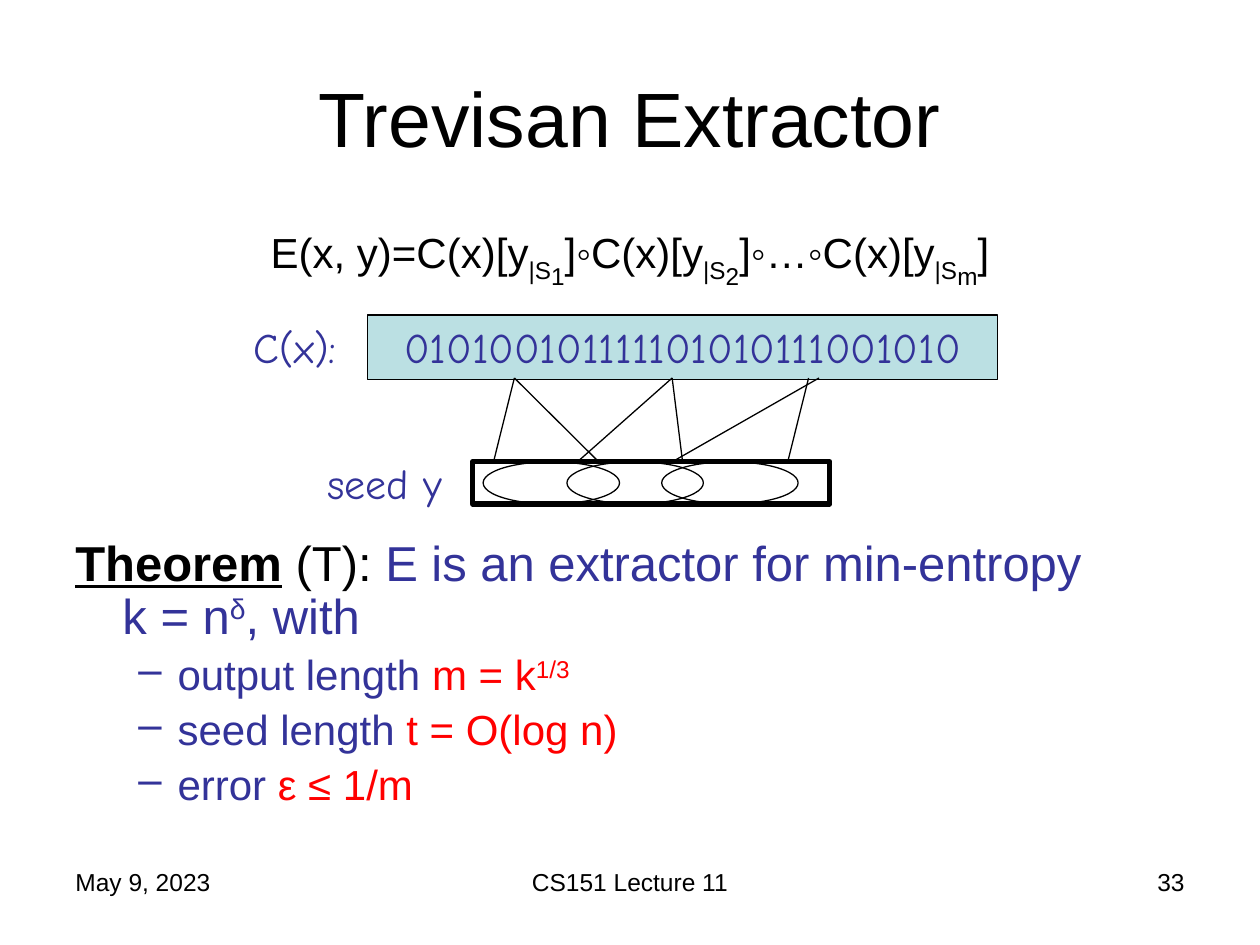
import pptx
import pptx.dml.color
import pptx.enum.shapes
import pptx.enum.text
import pptx.oxml.ns
import pptx.util
from lxml import etree

Cm = pptx.util.Cm
Pt = pptx.util.Pt
qn = pptx.oxml.ns.qn
Shape = pptx.enum.shapes.MSO_SHAPE
Align = pptx.enum.text.PP_ALIGN
Anchor = pptx.enum.text.MSO_ANCHOR

BLACK, INDIGO, RED, AQUA = "000000", "333399", "FF0000", "BBE0E3"
BITS_BOTTOM, SEED_TOP, SEED_HEIGHT = 7.62, 9.31, 0.85


def color(value):
    return pptx.dml.color.RGBColor.from_string(value)


def add_run(paragraph, text, size, ink=BLACK, font="Arial", baseline=0, strong=False):
    run = paragraph.add_run()
    run.text = text
    run.font.size = Pt(size)
    run.font.name = font
    run.font.color.rgb = color(ink)
    if strong:
        run.font.bold = run.font.underline = True
    if baseline:
        run.font._element.set("baseline", str(baseline * 1000))


def add_box(slide, left, top, width, height, align=Align.LEFT):
    frame = slide.shapes.add_textbox(Cm(left), Cm(top), Cm(width), Cm(height)).text_frame
    frame.word_wrap = True
    frame.paragraphs[0].alignment = align
    return frame


def add_label(slide, text, left, top, width, height, size,
              align=Align.LEFT, ink=BLACK, font="Arial"):
    frame = add_box(slide, left, top, width, height, align)
    add_run(frame.paragraphs[0], text, size, ink, font)
    return frame


def add_outline(slide, preset, left, top, width, height, weight=0.75, fill=None):
    outline = slide.shapes.add_shape(preset, Cm(left), Cm(top), Cm(width), Cm(height))
    outline.shadow.inherit = False
    if fill:
        outline.fill.solid()
        outline.fill.fore_color.rgb = color(fill)
    else:
        outline.fill.background()
    outline.line.color.rgb = color(BLACK)
    outline.line.width = Pt(weight)
    return outline


def add_ray(slide, bit_x, seed_x):
    ray = slide.shapes.add_connector(
        pptx.enum.shapes.MSO_CONNECTOR.STRAIGHT,
        Cm(bit_x), Cm(BITS_BOTTOM), Cm(seed_x), Cm(SEED_TOP))
    ray.line.color.rgb = color(BLACK)
    ray.line.width = Pt(0.75)
    etree.SubElement(ray._element.spPr, qn("a:effectLst"))


def set_spacing(paragraph, before):
    paragraph.line_spacing = 0.9
    paragraph.space_before = Pt(before)


def set_indent(paragraph, left, hanging, bullet=None):
    properties = paragraph._p.get_or_add_pPr()
    properties.set("marL", str(Cm(left)))
    properties.set("indent", str(-Cm(hanging)))
    if bullet:
        etree.SubElement(properties, qn("a:buChar")).set("char", bullet)


def add_formula(slide):
    formula = add_box(slide, 1.27, 4.45, 22.86, 1.4, Align.CENTER).paragraphs[0]
    set_spacing(formula, 5.5)
    for lead, index in (("E(x, y)=C(x)[y", "1"), ("]◦C(x)[y", "2"), ("]◦…◦C(x)[y", "m")):
        add_run(formula, lead, 24)
        add_run(formula, "|S", 24, baseline=-25)
        add_run(formula, index, 24, baseline=-40)
    add_run(formula, "]", 24)


def add_theorem(slide):
    frame = add_box(slide, 1.27, 10.74, 22.86, 6.28)
    claim = frame.paragraphs[0]
    set_spacing(claim, 6.4)
    set_indent(claim, 0.95, 0.95)
    add_run(claim, "Theorem", 28, strong=True)
    add_run(claim, " (T): ", 28)
    add_run(claim, "E is an extractor for min-entropy", 28, INDIGO)
    claim.add_line_break()
    add_run(claim, "k = n", 28, INDIGO)
    add_run(claim, "δ", 28, INDIGO, baseline=30)
    add_run(claim, ", with", 28, INDIGO)

    for quantity, bound, exponent in (("output length ", "m = k", "1/3"),
                                      ("seed length ", "t = O(log n)", None),
                                      ("error ", "ε ≤ 1/m", None)):
        item = frame.add_paragraph()
        item.level = 1
        set_spacing(item, 5.5)
        set_indent(item, 2.06, 0.79, "–")
        add_run(item, quantity, 24, INDIGO)
        add_run(item, bound, 24, RED)
        if exponent:
            add_run(item, exponent, 24, RED, baseline=30)


def add_diagram(slide):
    codeword = add_outline(slide, Shape.RECTANGLE, 7.41, 6.35, 12.7, 1.3, fill=AQUA).text_frame
    codeword.vertical_anchor = Anchor.TOP
    codeword.word_wrap = True
    codeword.paragraphs[0].alignment = Align.CENTER
    add_run(codeword.paragraphs[0], "010100101111101010111001010", 24, INDIGO, "Comic Neue")
    add_label(slide, "C(x):", 4.87, 6.35, 2.54, 1.27, 24, ink=INDIGO, font="Comic Neue")

    add_outline(slide, Shape.RECTANGLE, 9.53, SEED_TOP, 7.2, SEED_HEIGHT, weight=3)
    for subset_left in (9.74, 11.43, 13.34):
        add_outline(slide, Shape.OVAL, subset_left, SEED_TOP, 2.75, SEED_HEIGHT)
    for bit_x, seed_x in ((10.37, 9.95), (10.37, 12.07), (13.55, 11.64),
                          (13.55, 13.76), (16.51, 13.55), (16.3, 15.88)):
        add_ray(slide, bit_x, seed_x)
    add_label(slide, "seed y", 6.35, 9.1, 3.6, 1.27, 24, ink=INDIGO, font="Comic Neue")


def main():
    deck = pptx.Presentation()
    deck.slide_width, deck.slide_height = Cm(25.4), Cm(19.05)
    slide = deck.slides.add_slide(deck.slide_layouts[6])
    title = add_label(slide, "Trevisan Extractor", 1.27, 0.76, 22.86, 3.18, 44, Align.CENTER)
    title.vertical_anchor = Anchor.MIDDLE
    add_formula(slide)
    add_diagram(slide)
    add_theorem(slide)
    for text, left, width, align in (("May 9, 2023", 1.27, 5.93, Align.LEFT),
                                     ("CS151 Lecture 11", 8.68, 8.04, Align.CENTER),
                                     ("33", 18.2, 5.93, Align.RIGHT)):
        add_label(slide, text, left, 17.36, width, 1.32, 14, align)
    deck.save("out.pptx")


if __name__ == "__main__":
    main()
